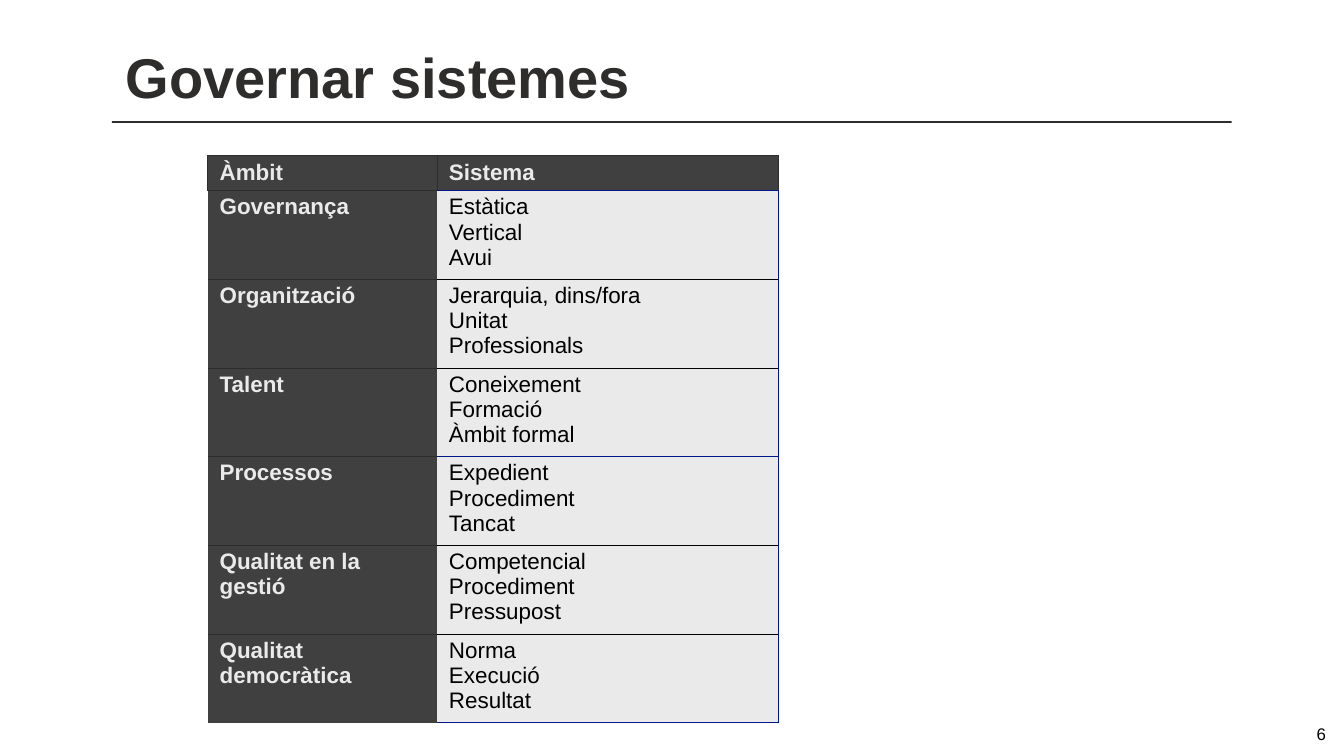
from lxml.etree import SubElement
from pptx import Presentation
from pptx.dml.color import RGBColor
from pptx.enum.shapes import MSO_SHAPE as Preset
from pptx.enum.text import MSO_ANCHOR as Anchor, PP_ALIGN as Align
from pptx.oxml.ns import qn
from pptx.util import Cm, Pt

TITLE = "Governar sistemes"
PAGE_NUMBER = "6"
HEADERS = ["Àmbit", "Sistema"]
SYSTEMS = [
    ("Governança", ["Estàtica", "Vertical", "Avui"]),
    ("Organització", ["Jerarquia, dins/fora", "Unitat", "Professionals"]),
    ("Talent", ["Coneixement", "Formació", "Àmbit formal"]),
    ("Processos", ["Expedient", "Procediment", "Tancat"]),
    ("Qualitat en la gestió", ["Competencial", "Procediment", "Pressupost"]),
    ("Qualitat democràtica", ["Norma", "Execució", "Resultat"]),
]
BLUE_RULES_BELOW = {"Talent", "Qualitat democràtica"}
COLUMN_WIDTHS = [11.56, 17.2]
HEADER_HEIGHT, ROW_HEIGHT = 1.75, 4.47
CELL_INSETS = (0.61, 0.2, 0.41, 0.2)
INK, DARK, LIGHT, BLUE, BLACK = "2E2D2C", "404040", "EAEAEA", "001789", "000000"


def color(value):
    return RGBColor.from_string(value)


def write(frame, lines, size, ink, bold=False, align=Align.LEFT):
    for index, line in enumerate(lines):
        paragraph = frame.paragraphs[0] if index == 0 else frame.add_paragraph()
        paragraph.alignment = align
        run = paragraph.add_run()
        run.text = line
        run.font.name = "Arial"
        run.font.size = Pt(size)
        run.font.bold = bold
        run.font.color.rgb = color(ink)


def set_insets(target, insets):
    left, top, right, bottom = map(Cm, insets)
    target.margin_left, target.margin_top = left, top
    target.margin_right, target.margin_bottom = right, bottom


def add_text(slide, box, text, insets, anchor, wrap=True, **style):
    frame = slide.shapes.add_textbox(*map(Cm, box)).text_frame
    frame.word_wrap = wrap
    frame.vertical_anchor = anchor
    set_insets(frame, insets)
    write(frame, [text], **style)


def set_borders(cell, **sides):
    properties = cell._tc.get_or_add_tcPr()
    for index, side in enumerate("LRTB"):
        line = SubElement(properties, qn(f"a:ln{side}"), w=str(Pt(1)))
        properties.insert(index, line)
        if side in sides:
            fill = SubElement(line, qn("a:solidFill"))
            SubElement(fill, qn("a:srgbClr"), val=sides[side])
        else:
            SubElement(line, qn("a:noFill"))


def fill_cell(cell, lines, background, ink, bold, **borders):
    set_insets(cell, CELL_INSETS)
    cell.vertical_anchor = Anchor.TOP
    write(cell.text_frame, lines, 32, ink, bold)
    cell.fill.solid()
    cell.fill.fore_color.rgb = color(background)
    set_borders(cell, **borders)


def add_systems_table(slide):
    height = HEADER_HEIGHT + ROW_HEIGHT * len(SYSTEMS)
    box = (10.46, 7.85, sum(COLUMN_WIDTHS), height)
    table = slide.shapes.add_table(
        len(SYSTEMS) + 1, len(HEADERS), *map(Cm, box)).table
    for column, width in zip(table.columns, COLUMN_WIDTHS):
        column.width = Cm(width)
    for index, row in enumerate(table.rows):
        row.height = Cm(ROW_HEIGHT if index else HEADER_HEIGHT)
    for index, (header, below) in enumerate(zip(HEADERS, [INK, BLUE])):
        fill_cell(table.cell(0, index), [header], DARK, LIGHT, True,
                  L=INK, R=INK, T=INK, B=below)
    above = BLUE
    for index, (area, traits) in enumerate(SYSTEMS, start=1):
        area_borders = {"T": INK}
        if index < len(SYSTEMS):
            area_borders["B"] = INK
        below = BLUE if area in BLUE_RULES_BELOW else BLACK
        fill_cell(table.cell(index, 0), [area], DARK, LIGHT, True, **area_borders)
        fill_cell(table.cell(index, 1), traits, LIGHT, BLACK, False,
                  R=BLUE, T=above, B=below)
        above = below


def main():
    presentation = Presentation()
    presentation.slide_width, presentation.slide_height = Cm(67.74), Cm(38.1)
    slide = presentation.slides.add_slide(presentation.slide_layouts[6])
    rule = slide.shapes.add_shape(
        Preset.RECTANGLE, *map(Cm, (5.64, 6.1, 56.44, 0.1)))
    rule.shadow.inherit = False
    rule.fill.solid()
    rule.fill.fore_color.rgb = color(INK)
    rule.line.fill.background()
    add_text(slide, (5.66, 1.85, 56.44, 3.99), TITLE, (0.69, 0.33, 0.69, 0.33),
             Anchor.BOTTOM, size=80, ink=INK, bold=True)
    add_systems_table(slide)
    add_text(slide, (59.46, 36.45, 7.62, 1.02), PAGE_NUMBER, (0.25,) * 4,
             Anchor.MIDDLE, wrap=False, size=24, ink=BLACK, align=Align.RIGHT)
    presentation.save("out.pptx")


if __name__ == "__main__":
    main()
